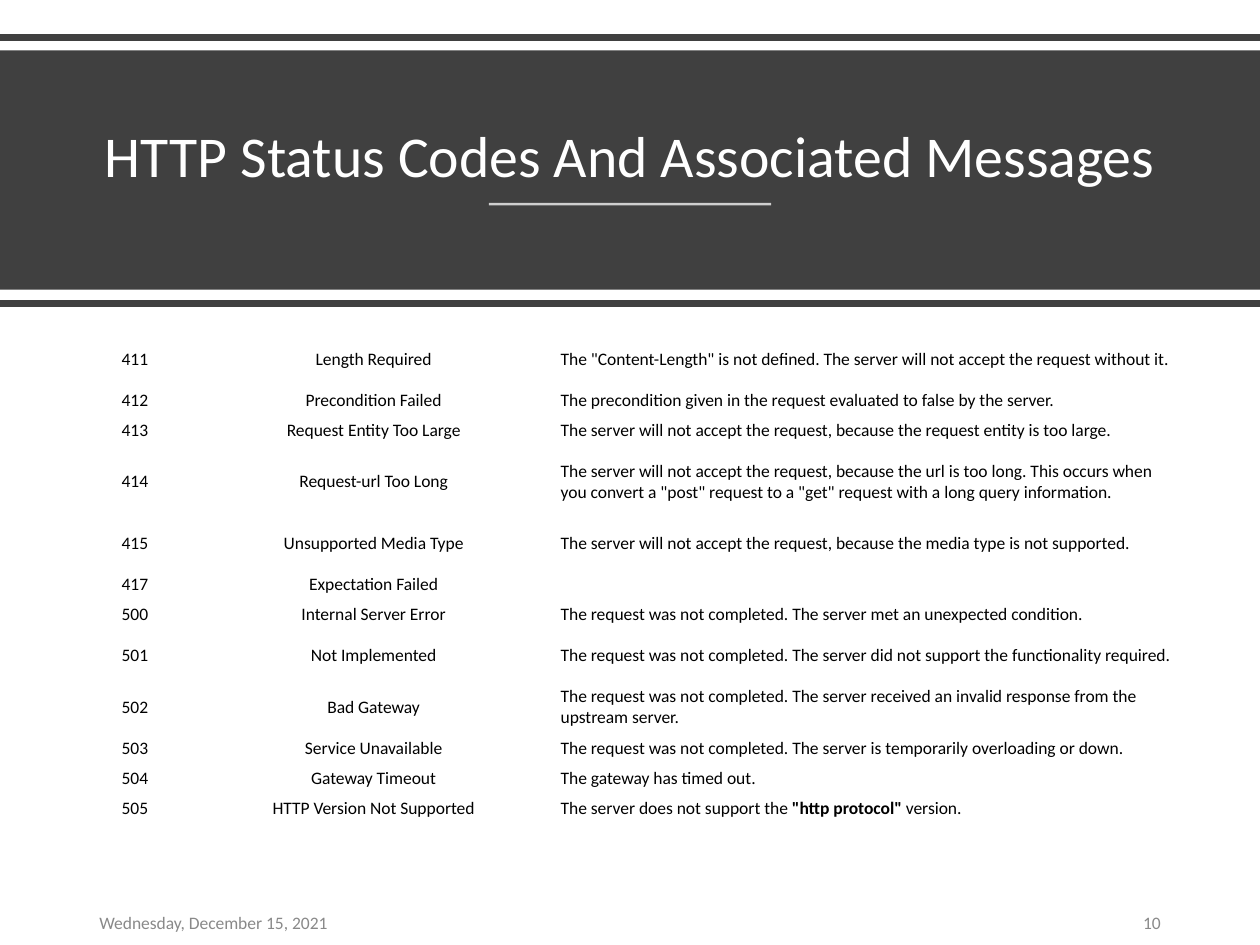
from lxml import etree
from pptx import Presentation
from pptx.dml.color import RGBColor
from pptx.enum import shapes, text
from pptx.oxml.ns import qn
from pptx.util import Inches, Pt

DARK, WHITE, BLACK, GREY = "404040", "FFFFFF", "000000", "898989"
LEFT, CENTER, RIGHT = text.PP_ALIGN.LEFT, text.PP_ALIGN.CENTER, text.PP_ALIGN.RIGHT
MIDDLE, BOTTOM = text.MSO_ANCHOR.MIDDLE, text.MSO_ANCHOR.BOTTOM

COLUMN_WIDTHS = [0.94, 2.85, 4.96]
SHORT, TALL, DOUBLE, SPARE = 0.24, 0.41, 0.57, 0.16

# Row height, code, message, description as (text, bold) runs or plain text
STATUS_CODES = [
    (TALL, "411", "Length Required",
     'The "Content-Length" is not defined. The server will not accept the request without it.'),
    (SHORT, "412", "Precondition Failed",
     "The precondition given in the request evaluated to false by the server."),
    (SHORT, "413", "Request Entity Too Large",
     "The server will not accept the request, because the request entity is too large."),
    (DOUBLE, "414", "Request-url Too Long",
     "The server will not accept the request, because the url is too long. This occurs when "
     'you convert a "post" request to a "get" request with a long query information.'),
    (TALL, "415", "Unsupported Media Type",
     "The server will not accept the request, because the media type is not supported."),
    (SHORT, "417", "Expectation Failed", ""),
    (SHORT, "500", "Internal Server Error",
     "The request was not completed. The server met an unexpected condition."),
    (TALL, "501", "Not Implemented",
     "The request was not completed. The server did not support the functionality required."),
    (TALL, "502", "Bad Gateway",
     "The request was not completed. The server received an invalid response from the "
     "upstream server."),
    (SHORT, "503", "Service Unavailable",
     "The request was not completed. The server is temporarily overloading or down."),
    (SHORT, "504", "Gateway Timeout", "The gateway has timed out."),
    (SHORT, "505", "HTTP Version Not Supported",
     [("The server does not support the ", False), ('"http protocol"', True),
      (" version.", False)]),
] + [(SPARE, "", "", "")] * 3


def rgb(value):
    return RGBColor.from_string(value)


def write(frame, content, size=10, color=BLACK, align=LEFT, line_spacing=None, after=None):
    """Write plain text, or a list of (text, bold) runs, into a text frame."""
    paragraph = frame.paragraphs[0]
    paragraph.alignment = align
    paragraph.line_spacing = line_spacing
    paragraph.space_after = None if after is None else Pt(after)
    if not content:
        etree.SubElement(paragraph._p, qn("a:endParaRPr"), sz="600")
        return
    for words, bold in [(content, False)] if isinstance(content, str) else content:
        run = paragraph.add_run()
        run.text = words
        run.font.name = "Calibri"
        run.font.size = Pt(size)
        run.font.bold = bold
        run.font.color.rgb = rgb(color)


def add_rule(slide, left, top, width, color, weight, opacity=None):
    rule = slide.shapes.add_connector(
        shapes.MSO_CONNECTOR.STRAIGHT, Inches(left), Inches(top), Inches(left + width), Inches(top))
    rule.line.color.rgb = rgb(color)
    rule.line.width = Pt(weight)
    properties = rule._element.spPr
    etree.SubElement(properties, qn("a:effectLst"))
    if opacity:
        fill = properties.find(".//" + qn("a:srgbClr"))
        etree.SubElement(fill, qn("a:alpha"), val=str(opacity * 1000))


def add_header(slide, left, top, width, height):
    # Dark band between two rules
    add_rule(slide, left, top - 0.1, width, DARK, 4)
    band = slide.shapes.add_shape(
        shapes.MSO_SHAPE.RECTANGLE, Inches(left), Inches(top), Inches(width), Inches(height))
    band.shadow.inherit = False
    band.fill.solid()
    band.fill.fore_color.rgb = rgb(DARK)
    band.line.fill.background()

    # Title, brought in front of the band
    title = slide.shapes.title
    title.left, title.top = Inches(left + 0.43), Inches(top + 0.14)
    title.width, title.height = Inches(width - 0.86), Inches(1.02)
    title.text_frame.vertical_anchor = BOTTOM
    title.text_frame.word_wrap = True
    write(title.text_frame, "HTTP Status Codes And Associated Messages",
          size=33, color=WHITE, align=CENTER, line_spacing=0.9)
    slide.shapes._spTree.append(title._element)

    # Short centred underline and closing rule
    underline = 2.24
    add_rule(slide, left + (width - underline) / 2, top + 1.22, underline, WHITE, 1.5, opacity=75)
    add_rule(slide, left, top + height + 0.11, width, DARK, 4)


def add_status_table(slide, left, top, width, height):
    table = slide.shapes.add_table(
        len(STATUS_CODES), len(COLUMN_WIDTHS),
        Inches(left), Inches(top), Inches(width), Inches(height)).table
    table.first_row = table.horz_banding = False
    for column, column_width in zip(table.columns, COLUMN_WIDTHS):
        column.width = Inches(column_width)
    for row, (row_height, *contents) in zip(table.rows, STATUS_CODES):
        row.height = Inches(row_height)
        for cell, content, align in zip(row.cells, contents, (CENTER, CENTER, LEFT)):
            cell.fill.background()
            cell.vertical_anchor = MIDDLE
            cell.margin_left = cell.margin_right = Inches(0.06)
            cell.margin_top = cell.margin_bottom = Inches(0.03)
            write(cell.text_frame, content, align=align)


def add_footer(slide, left, top, width, height):
    # Date on the left, slide number on the right
    part_width = 2.25
    for part_left, words, align in (
            (left, "Wednesday, December 15, 2021", LEFT),
            (left + width - part_width, "10", RIGHT)):
        frame = slide.shapes.add_textbox(
            Inches(part_left), Inches(top), Inches(part_width), Inches(height)).text_frame
        frame.word_wrap = True
        frame.vertical_anchor = MIDDLE
        write(frame, words, color=GREY, align=align, after=6)


def main():
    deck = Presentation()
    deck.slide_width, deck.slide_height = Inches(10), Inches(7.5)
    slide = deck.slides.add_slide(deck.slide_layouts[5])
    add_header(slide, 0, 0.4, 10, 1.9)
    add_footer(slide, 0.69, 7.13, 8.62, 0.38)
    add_status_table(slide, 0.6, 2.65, 8.76, 4.37)
    deck.save("out.pptx")


if __name__ == "__main__":
    main()
